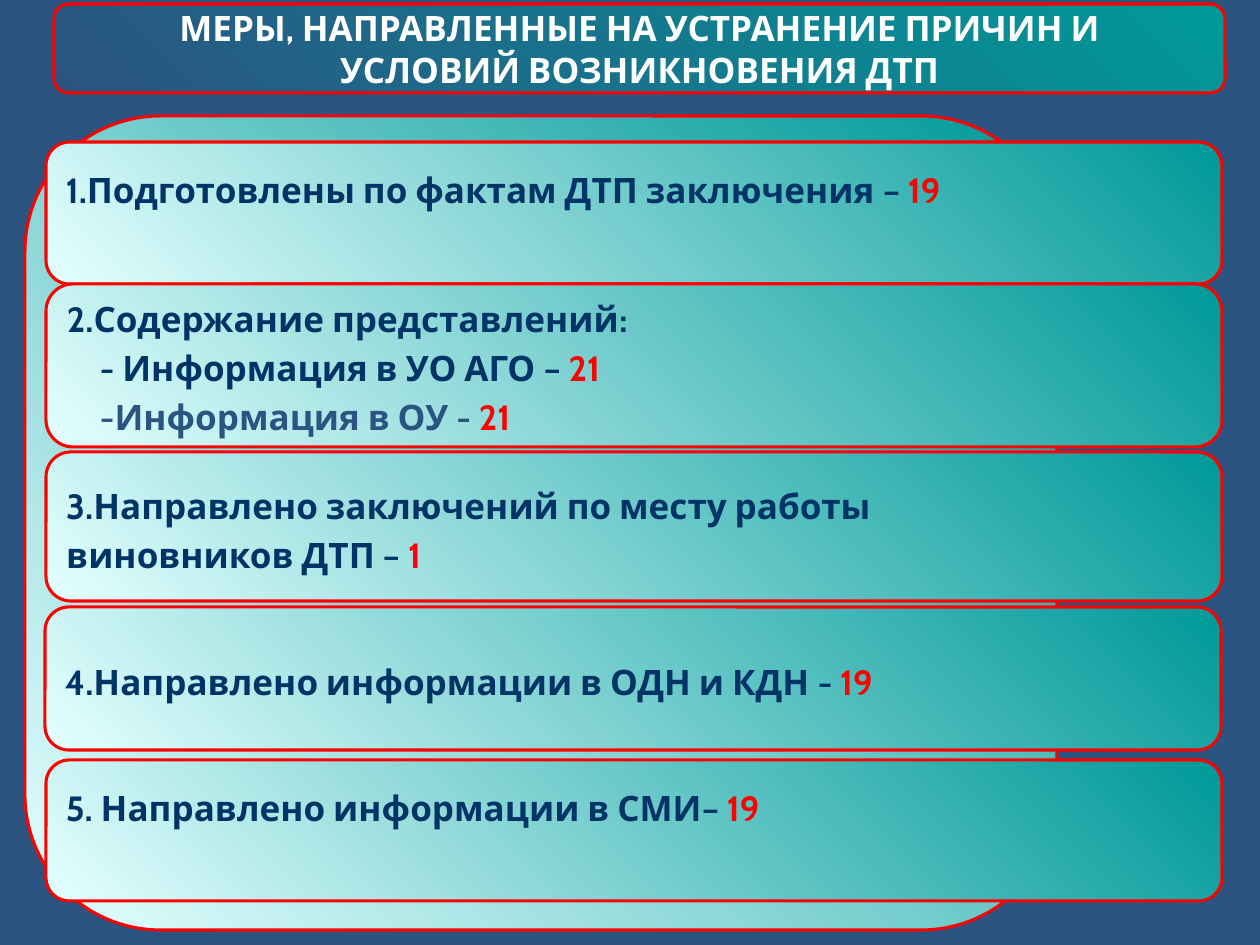
"""Build a slide listing the measures against the causes of road accidents."""
from dataclasses import dataclass

from pptx import Presentation
from pptx.dml.color import RGBColor
from pptx.enum.shapes import MSO_SHAPE
from pptx.enum.text import MSO_ANCHOR, PP_ALIGN
from pptx.shapes.autoshape import Shape
from pptx.slide import Slide
from pptx.text.text import TextFrame
from pptx.util import Emu, Pt

ROUNDED = MSO_SHAPE.ROUNDED_RECTANGLE
TOP, MIDDLE = MSO_ANCHOR.TOP, MSO_ANCHOR.MIDDLE
LEFT, CENTER = PP_ALIGN.LEFT, PP_ALIGN.CENTER

BLUE = RGBColor(0x2B, 0x54, 0x81)
TEAL = RGBColor(0x00, 0x99, 0x99)
ICE = RGBColor(0xE5, 0xFF, 0xFF)
NAVY = RGBColor(0x00, 0x33, 0x66)
RED = RGBColor(0xFF, 0x00, 0x00)
WHITE = RGBColor(0xFF, 0xFF, 0xFF)

FONT = "Cabin"
INSET = 13
CARD_WIDTH = 1176


def px(length: int) -> Emu:
    """Convert pixels at 126 to the inch into EMU."""
    return Emu(round(length * 914400 / 126))


@dataclass(frozen=True)
class Line:
    """A line of text with an optional count in red."""

    text: str
    count: str = ""
    indent: int = 0
    color: RGBColor = NAVY


@dataclass(frozen=True)
class Card:
    """A numbered measure in its own rounded box."""

    left: int
    top: int
    height: int
    text_top: int
    lines: tuple[Line, ...]


TITLE = (
    Line("МЕРЫ, НАПРАВЛЕННЫЕ НА УСТРАНЕНИЕ ПРИЧИН И", color=WHITE),
    Line("УСЛОВИЙ ВОЗНИКНОВЕНИЯ ДТП", color=WHITE),
)

CARDS = (
    Card(46, 142, 142, 20, (Line("1.Подготовлены по фактам ДТП заключения – ", "19"),)),
    Card(46, 284, 163, 6, (
        Line("2.Содержание представлений:"),
        Line("- Информация в УО АГО – ", "21", indent=33),
        Line("-Информация в ОУ - ", "21", indent=33, color=BLUE),
    )),
    Card(46, 452, 149, 25, (
        Line("3.Направлено заключений по месту работы"),
        Line("виновников ДТП – ", "1"),
    )),
    Card(45, 607, 143, 47, (Line("4.Направлено информации в ОДН и КДН - ", "19"),)),
    Card(46, 760, 141, 20, (Line("5. Направлено информации в СМИ– ", "19"),)),
)


def add_box(slide: Slide, left: int, top: int, width: int, height: int,
            start_color: RGBColor) -> Shape:
    """Add a red-edged rounded box shaded towards its top right corner."""
    shape = slide.shapes.add_shape(ROUNDED, px(left), px(top), px(width), px(height))
    shape.shadow.inherit = False
    shape.fill.gradient()
    shape.fill.gradient_angle = 45
    for stop, color in zip(shape.fill.gradient_stops, (start_color, TEAL)):
        stop.color.rgb = color
    shape.line.color.rgb = RED
    shape.line.width = Pt(1.75)
    return shape


def write_text(text_frame: TextFrame, lines: tuple[Line, ...], *, align: PP_ALIGN = LEFT,
               anchor: MSO_ANCHOR = TOP, margin_top: int = 0, gap: int = 0) -> None:
    """Write lines as paragraphs in the given format."""
    text_frame.word_wrap = True
    text_frame.vertical_anchor = anchor
    text_frame.margin_left = text_frame.margin_right = px(INSET)
    text_frame.margin_top = px(margin_top)
    text_frame.margin_bottom = 0
    for index, line in enumerate(lines):
        paragraph = text_frame.add_paragraph() if index else text_frame.paragraphs[0]
        if line.indent:
            paragraph._p.get_or_add_pPr().set("marL", str(px(line.indent)))
        paragraph.alignment = align
        paragraph.space_before = Pt(gap if index else 0)
        for text, color in ((line.text, line.color), (line.count, RED)):
            if text:
                run = paragraph.add_run()
                run.text = text
                run.font.name = FONT
                run.font.size = Pt(20)
                run.font.bold = True
                run.font.color.rgb = color


def main() -> None:
    """Create and save the presentation."""
    presentation = Presentation()
    presentation.slide_width, presentation.slide_height = px(1260), px(945)
    slide = presentation.slides.add_slide(presentation.slide_layouts[6])
    slide.background.fill.solid()
    slide.background.fill.fore_color.rgb = BLUE

    title = add_box(slide, 54, 4, 1171, 89, BLUE)
    write_text(title.text_frame, TITLE, align=CENTER, anchor=MIDDLE)
    add_box(slide, 25, 116, 1032, 814, ICE)
    for card in CARDS:
        box = add_box(slide, card.left, card.top, CARD_WIDTH, card.height, ICE)
        write_text(box.text_frame, card.lines, margin_top=card.text_top, gap=4)
    presentation.save("out.pptx")


if __name__ == "__main__":
    main()
